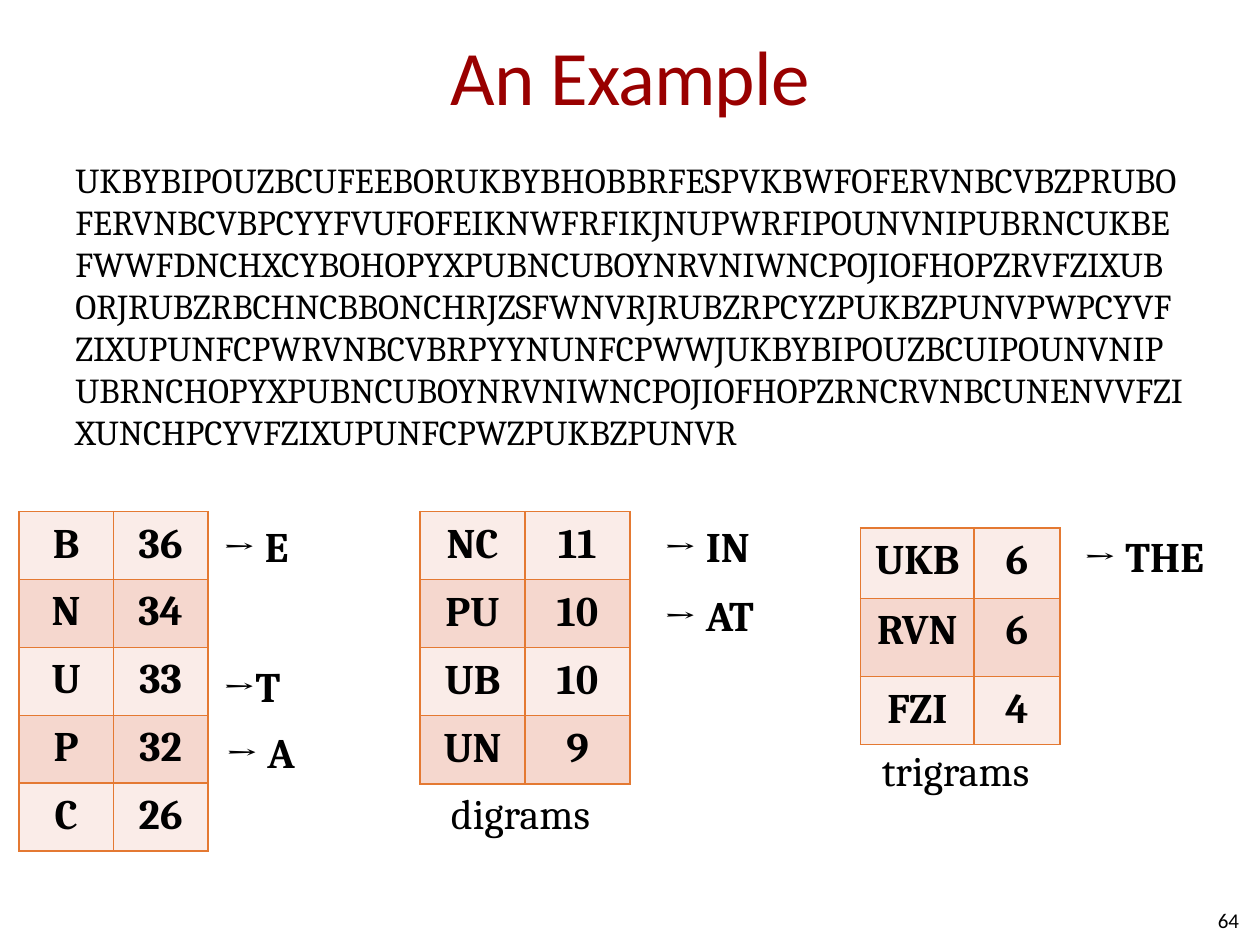
from lxml import etree
from pptx import Presentation
from pptx.dml.color import RGBColor
from pptx.enum.text import MSO_ANCHOR, PP_ALIGN
from pptx.oxml.ns import qn
from pptx.util import Pt

LEFT, CENTER, RIGHT = PP_ALIGN.LEFT, PP_ALIGN.CENTER, PP_ALIGN.RIGHT
TOP, MIDDLE = MSO_ANCHOR.TOP, MSO_ANCHOR.MIDDLE

COLORS = {
    "title": "990000",
    "text": "000000",
    "border": "E47932",
    "light": "FAECE8",
    "dark": "F5D7CE",
}
TITLE = "An Example"
CIPHERTEXT = (
    "UKBYBIPOUZBCUFEEBORUKBYBHOBBRFESPVKBWFOFERVNBCVBZPRUBO"
    "FERVNBCVBPCYYFVUFOFEIKNWFRFIKJNUPWRFIPOUNVNIPUBRNCUKBE"
    "FWWFDNCHXCYBOHOPYXPUBNCUBOYNRVNIWNCPOJIOFHOPZRVFZIXUB"
    "ORJRUBZRBCHNCBBONCHRJZSFWNVRJRUBZRPCYZPUKBZPUNVPWPCYVF"
    "ZIXUPUNFCPWRVNBCVBRPYYNUNFCPWWJUKBYBIPOUZBCUIPOUNVNIP"
    "UBRNCHOPYXPUBNCUBOYNRVNIWNCPOJIOFHOPZRNCRVNBCUNENVVFZI"
    "XUNCHPCYVFZIXUPUNFCPWZPUKBZPUNVR"
)
FREQUENCY_TABLES = [
    {"left": 10.8, "top": 292.3, "columns": [54, 54], "heights": [38.1] * 5,
     "rows": [("B", 36), ("N", 34), ("U", 33), ("P", 32), ("C", 26)]},
    {"left": 240, "top": 292.3, "columns": [60, 60], "heights": [38.9] * 4,
     "rows": [("NC", 11), ("PU", 10), ("UB", 10), ("UN", 9)]},
    {"left": 491.8, "top": 301.7, "columns": [64.8, 49], "heights": [40.3, 44.6, 38.9],
     "rows": [("UKB", 6), ("RVN", 6), ("FZI", 4)]},
]
LABEL_HEIGHT = 36
LABELS = [
    ("→ E", 120.2, 293.8, 57.6, True),
    ("→T", 120.2, 373.7, 54, True),
    ("→ A", 121.7, 411.8, 61.2, True),
    ("→ IN", 372.2, 293.8, 69.1, True),
    ("→ AT", 372.2, 333.4, 74.9, True),
    ("→ THE", 612, 299.5, 90.7, True),
    ("digrams", 250.6, 446.4, 99.4, False),
    ("trigrams", 496.8, 421.9, 103.7, False),
]


def style(paragraph, size, font="Cambria", color="text", bold=False, align=LEFT):
    paragraph.alignment = align
    paragraph.font.size = Pt(size)
    paragraph.font.name = font
    paragraph.font.bold = bold
    paragraph.font.color.rgb = RGBColor.from_string(COLORS[color])


def add_text(slide, text, box, size, wrap=True, anchor=TOP, margins=(7.2, 3.6), **look):
    shape = slide.shapes.add_textbox(*map(Pt, box))
    frame = shape.text_frame
    frame.word_wrap = wrap
    frame.vertical_anchor = anchor
    frame.margin_left = frame.margin_right = Pt(margins[0])
    frame.margin_top = frame.margin_bottom = Pt(margins[1])
    paragraph = frame.paragraphs[0]
    paragraph.text = text
    style(paragraph, size, **look)
    return paragraph


def add_borders(cell):
    properties = cell._tc.get_or_add_tcPr()
    for side in ("a:lnL", "a:lnR", "a:lnT", "a:lnB"):
        line = etree.SubElement(properties, qn(side), w=str(Pt(1)))
        fill = etree.SubElement(line, qn("a:solidFill"))
        etree.SubElement(fill, qn("a:srgbClr"), val=COLORS["border"])


def add_frequency_table(slide, left, top, columns, heights, rows):
    box = (left, top, sum(columns), sum(heights))
    table = slide.shapes.add_table(len(rows), len(columns), *map(Pt, box)).table
    for column, width in zip(table.columns, columns):
        column.width = Pt(width)
    for index, (row, height, values) in enumerate(zip(table.rows, heights, rows)):
        row.height = Pt(height)
        for cell, value in zip(row.cells, values):
            cell.margin_top = cell.margin_bottom = Pt(5)
            cell.text = str(value)
            style(cell.text_frame.paragraphs[0], 24, bold=True, align=CENTER)
            add_borders(cell)
            cell.fill.solid()
            shade = "dark" if index % 2 else "light"
            cell.fill.fore_color.rgb = RGBColor.from_string(COLORS[shade])


def main():
    presentation = Presentation()
    presentation.slide_width, presentation.slide_height = Pt(720), Pt(540)
    slide = presentation.slides.add_slide(presentation.slide_layouts[6])

    title = add_text(slide, TITLE, (36, -2.2, 648, 90), 44, anchor=MIDDLE,
                     margins=(0, 3.6), font="Calibri", color="title", align=CENTER)
    title.runs[0].font._element.set("spc", "-50")
    add_text(slide, CIPHERTEXT, (36, 87.1, 648, 356.4), 20)
    for frequency_table in FREQUENCY_TABLES:
        add_frequency_table(slide, **frequency_table)
    for text, left, top, width, bold in LABELS:
        add_text(slide, text, (left, top, width, LABEL_HEIGHT), 24, wrap=False, bold=bold)
    add_text(slide, "64", (540, 511.2, 168, 28.8), 12, anchor=MIDDLE,
             margins=(0, 0), font="Calibri", align=RIGHT)

    presentation.save("out.pptx")


if __name__ == "__main__":
    main()
